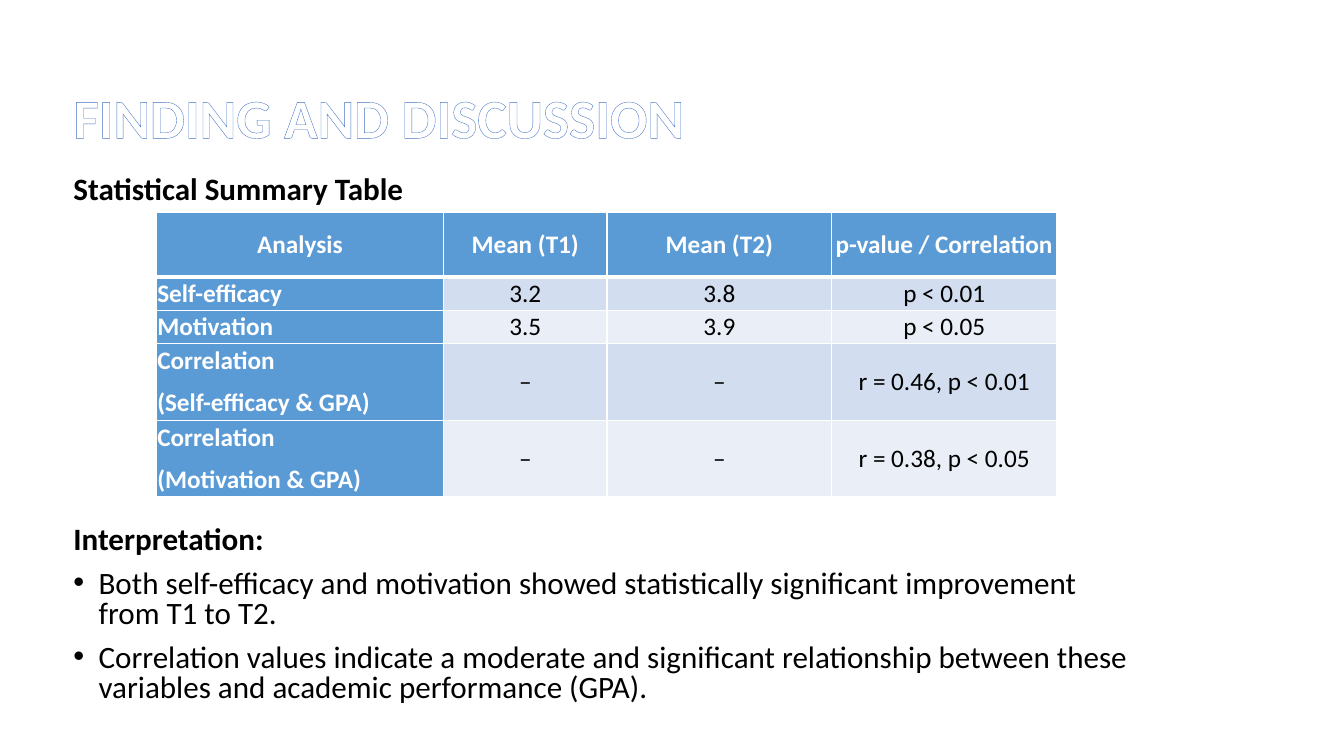
import pptx
import pptx.util
import pptx.dml.color
import pptx.enum.text
import pptx.oxml
import pptx.oxml.ns
from lxml import etree

Inches, Pt = pptx.util.Inches, pptx.util.Pt
RGB = pptx.dml.color.RGBColor.from_string
ALIGN = pptx.enum.text.PP_ALIGN
ANCHOR = pptx.enum.text.MSO_ANCHOR

# Content
TITLE = "FINDING AND DISCUSSION"
TABLE_HEADING = "Statistical Summary Table"
INTERPRETATION_HEADING = "Interpretation:"
INTERPRETATION = [
    "Both self-efficacy and motivation showed statistically significant improvement from T1 to T2.",
    "Correlation values indicate a moderate and significant relationship between these "
    "variables and academic performance (GPA).",
]
RESULTS = [
    ("Analysis", "Mean (T1)", "Mean (T2)", "p-value / Correlation"),
    ("Self-efficacy", "3.2", "3.8", "p < 0.01"),
    ("Motivation", "3.5", "3.9", "p < 0.05"),
    ("Correlation\n(Self-efficacy & GPA)", "–", "–", "r = 0.46, p < 0.01"),
    ("Correlation\n(Motivation & GPA)", "–", "–", "r = 0.38, p < 0.05"),
]

# Layout, in inches
TITLE_AREA = (0.63, 0.88, 11.5, 0.63)
BODY_AREA = (0.63, 1.7, 10.66, 5.51)
TABLE_CORNER = (1.55, 2.11)
COLUMN_WIDTHS = (2.85, 1.62, 2.23, 2.23)
ROW_HEIGHTS = (0.64, 0.33, 0.33, 0.76, 0.76)
CELL_INSET = 0.01
BULLET_INDENT = 0.25

THEME = {
    "font": "Calibri",
    "title_size": 39.6, "body_size": 22.2, "table_size": 18,
    "white": "FFFFFF", "black": "000000", "title_outline": "4472C4",
    "header": "5B9BD5", "bands": ("D2DEEF", "EAEFF7"),
    "title_spacing": 0.9, "body_spacing": 0.8,
    "body_gap": 10, "table_gap": 229, "cell_gap": 8,
    "border": 1, "header_border": 3,
}


def apply(target, values):
    for name, value in values.items():
        setattr(target, name, value)


def add_text(para, text, size, color, bold):
    span = para.add_run()
    span.text = text
    apply(span.font, {"name": THEME["font"], "size": Pt(size), "bold": bold})
    span.font.color.rgb = RGB(color)
    return span


def add_box(page, area, anchor):
    box = page.shapes.add_textbox(*map(Inches, area))
    apply(box.text_frame, {"word_wrap": True, "vertical_anchor": anchor})
    return box


def make_line(tag, color, width):
    line = pptx.oxml.parse_xml(
        f'<a:{tag} {pptx.oxml.ns.nsdecls("a")} w="{int(Pt(width))}"><a:solidFill>'
        f'<a:srgbClr val="{color}"/></a:solidFill></a:{tag}>')
    return line


def add_bullet(para):
    properties = para._p.get_or_add_pPr()
    indent = int(Inches(BULLET_INDENT))
    properties.set("marL", str(indent))
    properties.set("indent", str(-indent))
    font = etree.SubElement(properties, pptx.oxml.ns.qn("a:buFont"))
    font.set("typeface", "Arial")
    bullet = etree.SubElement(properties, pptx.oxml.ns.qn("a:buChar"))
    bullet.set("char", "•")


def add_title(page):
    box = add_box(page, TITLE_AREA, ANCHOR.MIDDLE)
    para = box.text_frame.paragraphs[0]
    para.line_spacing = THEME["title_spacing"]
    span = add_text(para, TITLE, THEME["title_size"], THEME["white"], True)
    outline = make_line("ln", THEME["title_outline"], 0.8)
    span.font._element.insert(0, outline)


def add_body(page):
    box = add_box(page, BODY_AREA, ANCHOR.TOP)
    box.fill.solid()
    box.fill.fore_color.rgb = RGB(THEME["white"])
    color = box._element.spPr.find(".//" + pptx.oxml.ns.qn("a:srgbClr"))
    etree.SubElement(color, pptx.oxml.ns.qn("a:alpha")).set("val", "50000")

    # Text, space before, bulleted; the table sits in the wide gap
    lines = [(TABLE_HEADING, 0, False),
             (INTERPRETATION_HEADING, THEME["table_gap"], False)]
    lines += [(text, THEME["body_gap"], True) for text in INTERPRETATION]
    frame = box.text_frame
    for index, (text, gap, bulleted) in enumerate(lines):
        para = frame.add_paragraph() if index else frame.paragraphs[0]
        apply(para, {"line_spacing": THEME["body_spacing"], "space_before": Pt(gap)})
        if bulleted:
            add_bullet(para)
        add_text(para, text, THEME["body_size"], THEME["black"], not bulleted)


def fill_cell(cell, text, row, column):
    heading = row == 0 or column == 0
    inset = Inches(CELL_INSET)
    apply(cell, {"margin_left": inset, "margin_right": inset, "margin_top": inset,
                 "margin_bottom": inset, "vertical_anchor": ANCHOR.MIDDLE})
    cell.fill.solid()
    cell.fill.fore_color.rgb = RGB(
        THEME["header"] if heading else THEME["bands"][(row - 1) % 2])

    # Borders come ahead of the fill; the rule under the header is thicker
    thick_side = {0: "lnB", 1: "lnT"}.get(row)
    properties = cell._tc.get_or_add_tcPr()
    for index, side in enumerate(("lnL", "lnR", "lnT", "lnB")):
        width = THEME["header_border" if side == thick_side else "border"]
        properties.insert(index, make_line(side, THEME["white"], width))

    frame = cell.text_frame
    for index, part in enumerate(text.split("\n")):
        para = frame.add_paragraph() if index else frame.paragraphs[0]
        left = column == 0 and row > 0
        apply(para, {"alignment": ALIGN.LEFT if left else ALIGN.CENTER,
                     "space_after": Pt(THEME["cell_gap"])})
        add_text(para, part, THEME["table_size"],
                 THEME["white" if heading else "black"], heading)


def add_results(page):
    size = (sum(COLUMN_WIDTHS), sum(ROW_HEIGHTS))
    table = page.shapes.add_table(len(RESULTS), len(COLUMN_WIDTHS),
                                  *map(Inches, TABLE_CORNER + size)).table
    table.first_col = True
    for column, width in zip(table.columns, COLUMN_WIDTHS):
        column.width = Inches(width)
    for row, height in zip(table.rows, ROW_HEIGHTS):
        row.height = Inches(height)
    for row, values in enumerate(RESULTS):
        for column, text in enumerate(values):
            fill_cell(table.cell(row, column), text, row, column)


def main():
    deck = pptx.Presentation()
    apply(deck, {"slide_width": Inches(13.33), "slide_height": Inches(7.5)})
    page = deck.slides.add_slide(deck.slide_layouts[6])
    add_title(page)
    add_body(page)
    add_results(page)
    deck.save("out.pptx")


if __name__ == "__main__":
    main()
